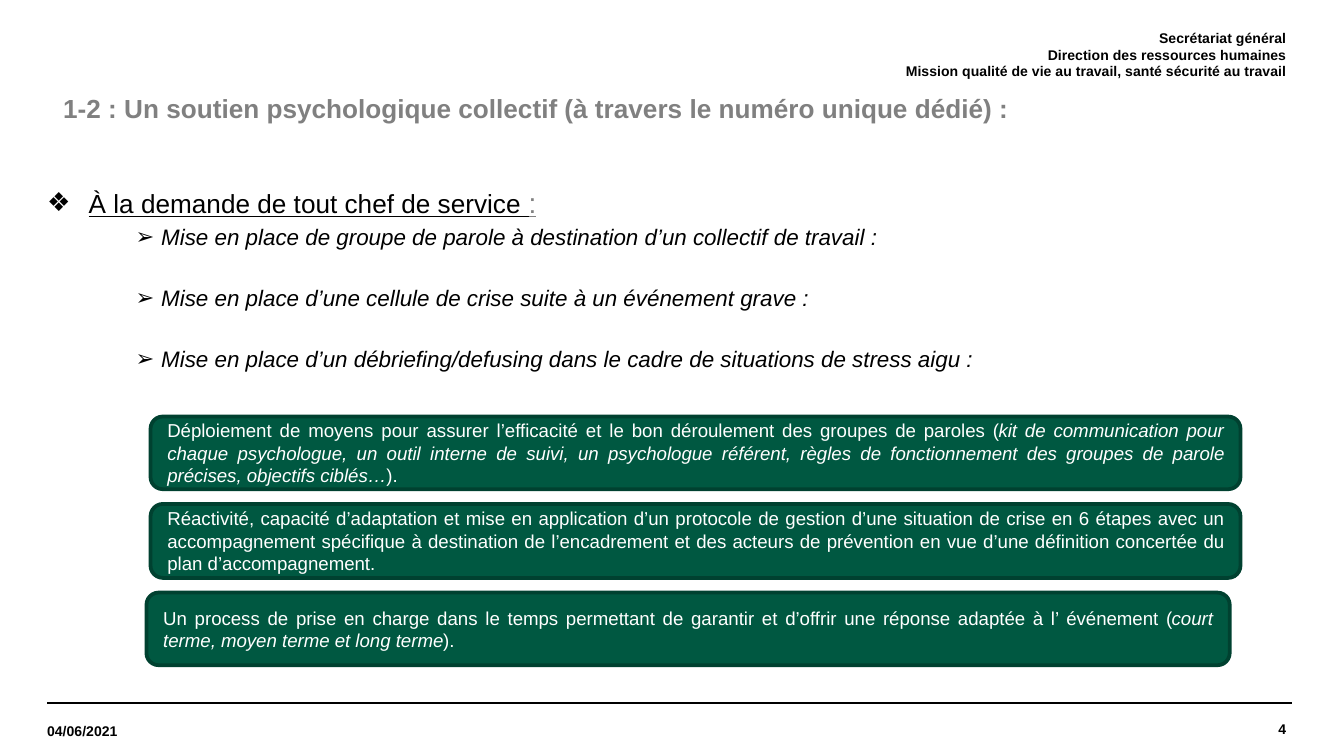
from typing import NamedTuple

from lxml.etree import SubElement
from pptx import Presentation
from pptx.dml.color import RGBColor
from pptx.enum.shapes import MSO_CONNECTOR, MSO_SHAPE
from pptx.enum.text import MSO_ANCHOR as Anchor, MSO_AUTO_SIZE, PP_ALIGN as Align
from pptx.oxml.ns import qn
from pptx.util import Inches, Pt

BLACK = RGBColor(0x00, 0x00, 0x00)
WHITE = RGBColor(0xFF, 0xFF, 0xFF)
GRAY = RGBColor(0x80, 0x80, 0x80)
GREEN = RGBColor(0x00, 0x58, 0x41)
DARK_GREEN = RGBColor(0x00, 0x41, 0x30)


class Area(NamedTuple):
    left: float
    top: float
    width: float
    height: float

    def lengths(self) -> list:
        return [Inches(value) for value in self]


class Span(NamedTuple):
    text: str
    size: float
    color: RGBColor = BLACK
    bold: bool = False
    italic: bool = False
    underline: bool = False


class Card(NamedTuple):
    area: Area
    spans: list[Span]


def add_span(para, span: Span) -> None:
    """Add the span as runs, with a line break at each newline."""
    for index, line in enumerate(span.text.split("\n")):
        if index:
            para.add_line_break()
        run = para.add_run()
        run.text = line
        font = run.font
        font.name, font.size = "Arial", Pt(span.size)
        font.bold, font.italic, font.underline = span.bold, span.italic, span.underline
        font.color.rgb = span.color


def set_indent(para, left: float, hanging: float = 0, bullet: str = "") -> None:
    properties = para._p.get_or_add_pPr()
    properties.set("marL", str(Inches(left)))
    properties.set("indent", str(-Inches(hanging)))
    if bullet:
        SubElement(properties, qn("a:buFont"), typeface="Arial")
        SubElement(properties, qn("a:buChar"), char=bullet)


def add_text(page, area: Area, paragraphs: list[list[Span]],
             align=Align.LEFT, anchor=Anchor.MIDDLE):
    frame = page.shapes.add_textbox(*area.lengths()).text_frame
    frame.word_wrap, frame.vertical_anchor = True, anchor
    frame.margin_left = frame.margin_right = frame.margin_top = frame.margin_bottom = 0
    for index, spans in enumerate(paragraphs):
        para = frame.add_paragraph() if index else frame.paragraphs[0]
        para.alignment = align
        for span in spans:
            add_span(para, span)
    return frame


def add_rule(page, left: float, right: float, top: float) -> None:
    rule = page.shapes.add_connector(MSO_CONNECTOR.STRAIGHT, Inches(left), Inches(top),
                                     Inches(right), Inches(top))
    rule.line.color.rgb, rule.line.width = BLACK, Pt(0.8)
    SubElement(rule._element.spPr, qn("a:effectLst"))


def add_card(page, card: Card) -> None:
    box = page.shapes.add_shape(MSO_SHAPE.ROUNDED_RECTANGLE, *card.area.lengths())
    box.shadow.inherit = False
    box.fill.solid()
    box.fill.fore_color.rgb = GREEN
    box.line.color.rgb, box.line.width = DARK_GREEN, Pt(2)
    frame = box.text_frame
    frame.word_wrap, frame.vertical_anchor = True, Anchor.MIDDLE
    para = frame.paragraphs[0]
    para.alignment = Align.JUSTIFY
    for span in card.spans:
        add_span(para, span)


def card_text(text: str, italic: bool = False) -> Span:
    return Span(text, 10, WHITE, italic=italic)


def small_text(text: str) -> list[Span]:
    return [Span(text, 7.5, bold=True)]


HEADER = [
    "Secrétariat général\nDirection des ressources humaines",
    "Mission qualité de vie au travail, santé sécurité au travail",
]
ACTIONS = [
    "Mise en place de groupe de parole à destination d’un collectif de travail :",
    "Mise en place d’une cellule de crise suite à un événement grave :",
    "Mise en place d’un débriefing/defusing dans le cadre de situations de stress aigu :",
]
CARDS = [
    Card(Area(1.12, 3.1, 8.11, 0.54), [
        card_text("Déploiement de moyens pour assurer l’efficacité et le bon déroulement "
                  "des groupes de paroles ("),
        card_text("kit de communication pour chaque psychologue, un outil interne de suivi, "
                  "un psychologue référent, règles de fonctionnement des groupes de parole "
                  "précises, objectifs ciblés…", italic=True),
        card_text(").")]),
    Card(Area(1.12, 3.75, 8.11, 0.55), [
        card_text("Réactivité, capacité d’adaptation et mise en application d’un protocole de "
                  "gestion d’une situation de crise en 6 étapes avec un accompagnement "
                  "spécifique à destination de l’encadrement et des acteurs de prévention en "
                  "vue d’une définition concertée du plan d’accompagnement. ")]),
    Card(Area(1.09, 4.41, 8.06, 0.54), [
        card_text("Un process de prise en charge dans le temps permettant de garantir et "
                  "d’offrir une réponse adaptée à l’ événement ("),
        card_text("court terme, moyen terme et long terme", italic=True),
        card_text(").")]),
]


def main() -> None:
    deck = Presentation()
    deck.slide_width = Inches(10)
    deck.slide_height = Inches(10 * 9 / 16)
    page = deck.slides.add_slide(deck.slide_layouts[5])

    # Title
    title = page.shapes.title
    title.left, title.top, title.width, title.height = Area(0.35, 0.89, 9.21, 0.59).lengths()
    frame = title.text_frame
    frame.auto_size, frame.word_wrap = MSO_AUTO_SIZE.NONE, True
    frame.vertical_anchor = Anchor.MIDDLE
    para = frame.paragraphs[0]
    para.alignment, para.line_spacing = Align.LEFT, 0.9
    set_indent(para, 0.02)
    add_span(para, Span("1-2 : Un soutien psychologique collectif "
                        "(à travers le numéro unique dédié) :\n", 14, GRAY, bold=True))

    # Header and footer
    add_text(page, Area(3.14, 0.21, 6.43, 0.39),
             [small_text(line) for line in HEADER], Align.RIGHT)
    for left in (0.35, 0.39):
        add_rule(page, left, left + 9.22, 5.23)
    add_text(page, Area(0.35, 5.25, 1.32, 0.38), [small_text("04/06/2021")])
    add_text(page, Area(8.09, 5.23, 1.48, 0.39), [small_text("4")], Align.RIGHT)

    # Request and its actions
    request = add_text(page, Area(0.35, 1.38, 9.21, 0.25), [[
        Span("À la demande de tout chef de service ", 14, underline=True),
        Span(":", 15, GRAY, underline=True)]], anchor=Anchor.TOP)
    set_indent(request.paragraphs[0], 0.31, 0.31, "❖")
    actions = add_text(page, Area(0.43, 1.66, 9.13, 3.36),
                       [[Span(action, 12, italic=True)] for action in ACTIONS],
                       anchor=Anchor.TOP)
    for index, para in enumerate(actions.paragraphs):
        set_indent(para, 0.77, 0.19, "➢")
        if index:
            para.space_before = Pt(18.25)

    # Green cards
    for card in CARDS:
        add_card(page, card)

    deck.save("out.pptx")


if __name__ == "__main__":
    main()
